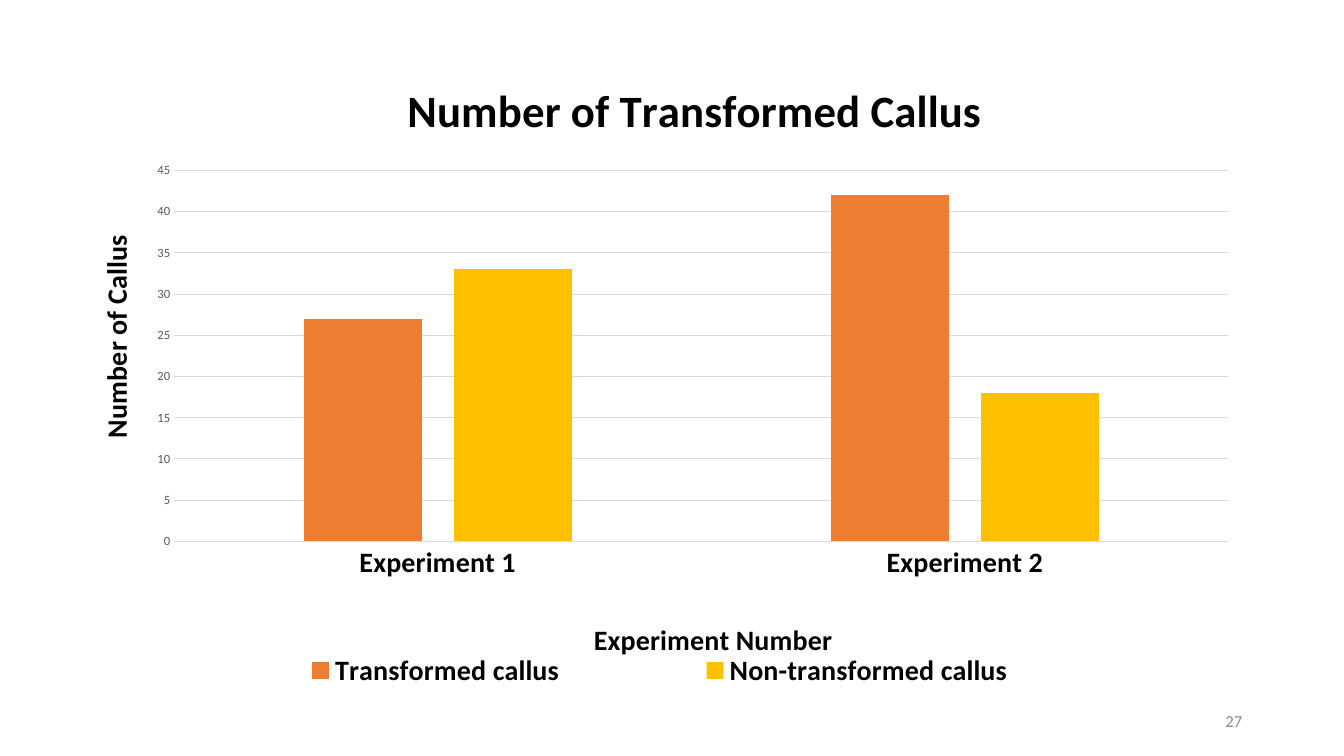
from pptx import Presentation
from pptx.chart.data import CategoryChartData
from pptx.dml.color import RGBColor
from pptx.enum.chart import XL_CHART_TYPE, XL_LEGEND_POSITION, XL_TICK_MARK
from pptx.enum.text import MSO_ANCHOR, PP_ALIGN
from pptx.oxml import parse_xml
from pptx.oxml.ns import nsdecls
from pptx.util import Inches, Pt

CLUSTERED = XL_CHART_TYPE.COLUMN_CLUSTERED
BOTTOM = XL_LEGEND_POSITION.BOTTOM
NO_TICK = XL_TICK_MARK.NONE
MIDDLE = MSO_ANCHOR.MIDDLE
RIGHT = PP_ALIGN.RIGHT

BLACK = RGBColor(0x00, 0x00, 0x00)
GRAY = RGBColor(0x59, 0x59, 0x59)
LIGHT_GRAY = RGBColor(0xD9, 0xD9, 0xD9)
NUMBER_GRAY = RGBColor(0x8C, 0x8C, 0x8C)
ORANGE = RGBColor(0xED, 0x7D, 0x31)
GOLD = RGBColor(0xFF, 0xC0, 0x00)
FONT = "Calibri"

EXPERIMENTS = ["Experiment 1", "Experiment 2"]
CALLUS_COUNTS = [
    ("Transformed callus", (27, 42), ORANGE),
    ("Non-transformed callus", (33, 18), GOLD),
]


def style_font(font, size, color=BLACK, bold=False):
    font.name = FONT
    font.size = Pt(size)
    font.bold = bold
    font.color.rgb = color


def style_line(line, color):
    line.color.rgb = color
    line.width = Pt(0.75)


def set_title(title, text, size):
    title.text_frame.text = text
    style_font(title.text_frame.paragraphs[0].runs[0].font, size, bold=True)


def place(element, index, x, y, width=None, height=None, inner=False):
    for old_layout in element.xpath("c:layout"):
        element.remove(old_layout)
    target = '<c:layoutTarget val="inner"/>' if inner else ""
    sizes = "" if width is None else f'<c:w val="{width}"/><c:h val="{height}"/>'
    element.insert(index, parse_xml(
        f'<c:layout {nsdecls("c")}><c:manualLayout>{target}'
        '<c:xMode val="edge"/><c:yMode val="edge"/>'
        f'<c:x val="{x}"/><c:y val="{y}"/>{sizes}'
        '</c:manualLayout></c:layout>'))


def style_axes(chart):
    experiments = chart.category_axis
    experiments.major_tick_mark = experiments.minor_tick_mark = NO_TICK
    style_font(experiments.tick_labels.font, 20, bold=True)
    style_line(experiments.format.line, LIGHT_GRAY)
    set_title(experiments.axis_title, "Experiment Number", 20)

    counts = chart.value_axis
    counts.minimum_scale, counts.maximum_scale, counts.major_unit = 0, 45, 5
    counts.major_tick_mark = counts.minor_tick_mark = NO_TICK
    style_font(counts.tick_labels.font, 9, GRAY)
    counts.format.line.fill.background()
    style_line(counts.major_gridlines.format.line, LIGHT_GRAY)
    set_title(counts.axis_title, "Number of Callus", 20)


def arrange_parts(chart):
    root = chart.element
    place(root.xpath("c:chart/c:title")[0], 1, 0.28, 0.03)
    place(root.xpath("c:chart/c:plotArea")[0], 0, 0.09, 0.18, 0.89, 0.56, True)
    place(root.xpath("c:chart/c:legend")[0], 1, 0.09, 0.9, 0.82, 0.07)
    place(root.xpath("//c:catAx/c:title")[0], 1, 0.44, 0.85)
    count_title = root.xpath("//c:valAx/c:title")[0]
    place(count_title, 1, 0.02, 0.27)
    body = count_title.xpath(".//a:bodyPr")[0]
    body.set("rot", "-5400000")
    body.set("vert", "horz")


def add_callus_chart(slide):
    data = CategoryChartData()
    data.categories = EXPERIMENTS
    for name, counts, _ in CALLUS_COUNTS:
        data.add_series(name, counts)
    chart = slide.shapes.add_chart(
        CLUSTERED, Inches(0.67), Inches(0.51), Inches(11.75), Inches(6.57), data).chart
    style_font(chart.font, 10)
    chart.has_title = True
    set_title(chart.chart_title, "Number of Transformed Callus", 32)
    chart.has_legend = True
    chart.legend.position = BOTTOM
    chart.legend.include_in_layout = False
    style_font(chart.legend.font, 20, bold=True)

    columns = chart.plots[0]
    columns.gap_width = 219
    columns.overlap = -27
    columns.vary_by_categories = False
    for series, (_, _, color) in zip(columns.series, CALLUS_COUNTS):
        series.format.fill.solid()
        series.format.fill.fore_color.rgb = color
    style_axes(chart)
    arrange_parts(chart)


def add_page_number(slide, number):
    frame = slide.shapes.add_textbox(
        Inches(9.42), Inches(6.95), Inches(3), Inches(0.4)).text_frame
    frame.word_wrap = True
    frame.vertical_anchor = MIDDLE
    frame.text = number
    paragraph = frame.paragraphs[0]
    paragraph.alignment = RIGHT
    style_font(paragraph.runs[0].font, 12, NUMBER_GRAY)


def main():
    presentation = Presentation()
    presentation.slide_width = Inches(13.33)
    presentation.slide_height = Inches(7.5)
    slide = presentation.slides.add_slide(presentation.slide_layouts[6])
    add_page_number(slide, "27")
    add_callus_chart(slide)
    presentation.save("out.pptx")


if __name__ == "__main__":
    main()
